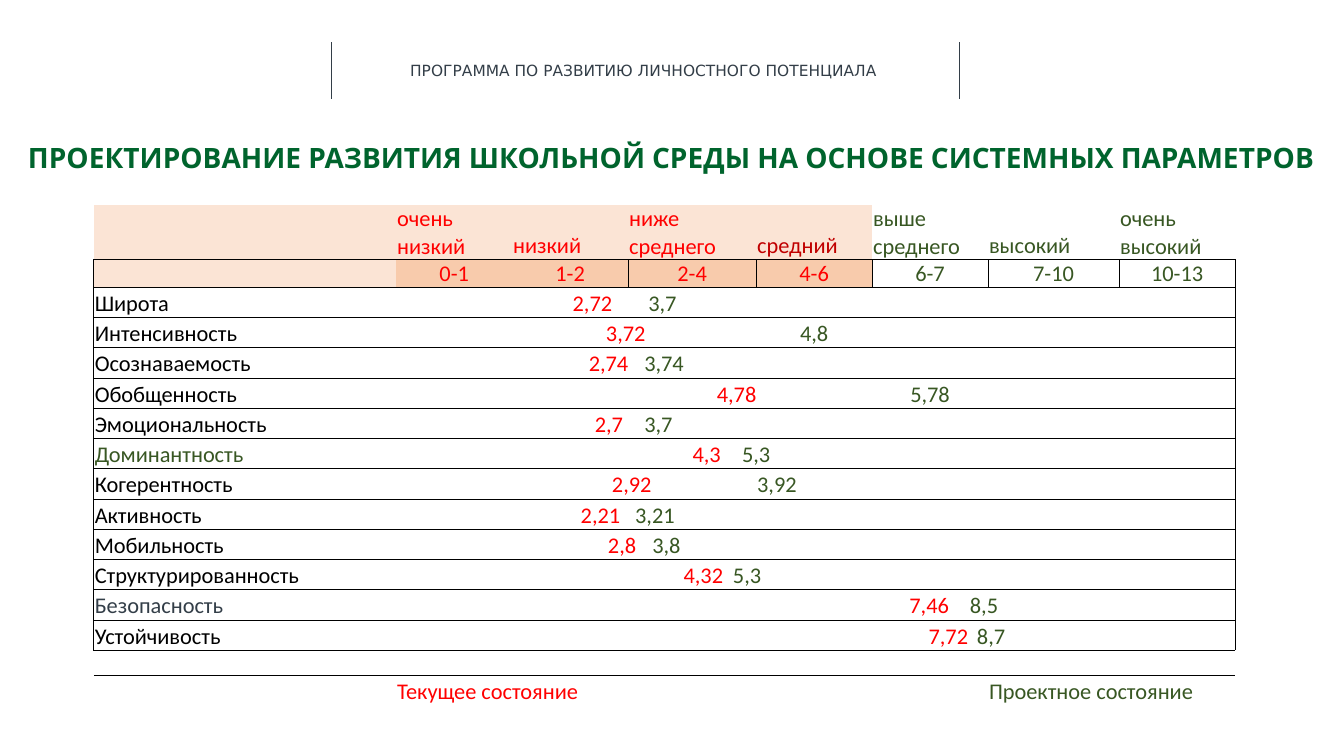
from lxml.etree import SubElement
from pptx import Presentation
from pptx.dml.color import RGBColor
from pptx.enum.shapes import MSO_CONNECTOR
from pptx.enum.text import MSO_ANCHOR as ANCHOR, MSO_AUTO_SIZE as FIT, PP_ALIGN as ALIGN
from pptx.oxml.ns import qn
from pptx.util import Inches, Pt

RED, GREEN, SLATE, BLACK, WHITE = "FF0000", "385723", "333E48", "000000", "FFFFFF"
PEACH, ORANGE = "FBE4D5", "F8CBAC"
NO_STYLE = "{2D5ABB26-0587-4C30-8999-92F81FD0307C}"
COL_WIDTHS = [3, 1.15, 1.15, 1.27, 1.15, 1.15, 1.3, 1.15]
ROW_HEIGHTS = [0.45, 0.25] + [0.3] * 12 + [0.25, 0.3]
LAST = len(COL_WIDTHS) - 1
LEVELS = [
    ("очень низкий", "0-1", RED), ("низкий", "1-2", RED),
    ("ниже среднего", "2-4", RED), ("средний", "4-6", "C00000"),
    ("выше среднего", "6-7", GREEN), ("высокий", "7-10", GREEN),
    ("очень высокий", "10-13", GREEN),
]
# name, colour, columns merged, (current, tab), (planned, tab or alignment in the next cell)
PARAMETERS = [
    ("Широта", BLACK, 4, ("2,72", 4.74), ("3,7", 5.49)),
    ("Интенсивность", BLACK, 4, ("3,72", 5.07), ("4,8", ALIGN.CENTER)),
    ("Осознаваемость", BLACK, 4, ("2,74", 4.9), ("3,74", 5.45)),
    ("Обобщенность", BLACK, 5, ("4,78", 6.17), ("5,78", ALIGN.CENTER)),
    ("Эмоциональность", BLACK, 4, ("2,7", 4.96), ("3,7", 5.45)),
    ("Доминантность", GREEN, 5, ("4,3", 5.93), ("5,3", 6.42)),
    ("Когерентность", BLACK, 4, ("2,92", 5.13), ("3,92", ALIGN.LEFT)),
    ("Активность", BLACK, 4, ("2,21", 4.82), ("3,21", 5.36)),
    ("Мобильность", BLACK, 4, ("2,8", 5.09), ("3,8", 5.53)),
    ("Структурированность", BLACK, 5, ("4,32", 5.84), ("5,3", 6.33)),
    ("Безопасность", SLATE, 7, ("7,46", 8.08), ("8,5", 8.68)),
    ("Устойчивость", BLACK, 7, ("7,72", 8.27), ("8,7", 8.75)),
]


def rgb(value):
    return RGBColor.from_string(value)


def write(p, text, size=16, font="Calibri", color=BLACK, bold=False, align=None):
    if align is not None:
        p.alignment = align
    r = p.add_run()
    r.text = text
    r.font.size, r.font.name, r.font.bold = Pt(size), font, bold
    r.font.color.rgb = rgb(color)


def add_rule(slide, x):
    line = slide.shapes.add_connector(
        MSO_CONNECTOR.STRAIGHT, Inches(x), Inches(0.42), Inches(x), Inches(0.98))
    line.line.color.rgb, line.line.width = rgb(SLATE), Pt(0.5)
    SubElement(line._element.spPr, qn("a:effectLst"))


def set_tabs(p, stops):
    tabs = SubElement(p._p.get_or_add_pPr(), qn("a:tabLst"))
    for stop in stops:
        SubElement(tabs, qn("a:tab"), pos=str(Inches(stop)), algn="l")


def format_cell(cell, fill, sides):
    cell.margin_left = cell.margin_right = cell.margin_top = Inches(0.01)
    cell.margin_bottom = 0
    cell.vertical_anchor = ANCHOR.BOTTOM
    tcPr = cell._tc.get_or_add_tcPr()
    for side in "LRTB":
        if side in sides:
            ln = SubElement(tcPr, qn("a:ln" + side), w=str(Pt(0.5)))
            SubElement(SubElement(ln, qn("a:solidFill")), qn("a:srgbClr"), val=BLACK)
    cell.fill.solid()
    cell.fill.fore_color.rgb = rgb(fill)
    p = cell.text_frame.paragraphs[0]
    if not p.runs:
        SubElement(p._p, qn("a:endParaRPr"), sz="1200")
    return cell


def merge(table, row, first, last):
    table.cell(row, first).merge(table.cell(row, last))


def cell_paragraph(table, row, col):
    return table.cell(row, col).text_frame.paragraphs[0]


def fill_parameter(table, row, name, color, merged, current, planned):
    merge(table, row, 0, merged - 1)
    p = cell_paragraph(table, row, 0)
    inline = isinstance(planned[1], float)
    set_tabs(p, [current[1], planned[1]] if inline else [current[1]])
    write(p, name, color=color)
    write(p, "\t" + current[0], color=RED)
    if inline:
        write(p, "\t" + planned[0], color=GREEN)
    else:
        write(cell_paragraph(table, row, merged), planned[0], color=GREEN, align=planned[1])


def cell_look(row, col):
    low = col <= 4
    if row == 0:
        return (PEACH if low else WHITE), "B"
    if row == 1:
        fill = PEACH if col == 0 else ORANGE if low else WHITE
        return fill, "TB" + ("L" if col in (0, *range(3, 8)) else "") + ("R" if col >= 2 else "")
    if row < 14:
        return WHITE, "TB" + ("L" if col == 0 else "") + ("R" if col == LAST else "")
    return WHITE, "T" if row == 14 else ""


def add_parameter_table(slide):
    frame = slide.shapes.add_table(
        len(ROW_HEIGHTS), len(COL_WIDTHS), Inches(0.93), Inches(2.03),
        Inches(sum(COL_WIDTHS)), Inches(sum(ROW_HEIGHTS)))
    table = frame.table
    table.first_row = table.horz_banding = False
    table._tbl.tblPr.find(qn("a:tableStyleId")).text = NO_STYLE
    for column, width in zip(table.columns, COL_WIDTHS):
        column.width = Inches(width)
    for row, height in zip(table.rows, ROW_HEIGHTS):
        row.height = Inches(height)

    for col, (level, score, color) in enumerate(LEVELS, 1):
        write(cell_paragraph(table, 0, col), level, color=color)
        write(cell_paragraph(table, 1, col), score, color=RED if col <= 4 else GREEN,
              align=ALIGN.CENTER)
    for row, parameter in enumerate(PARAMETERS, 2):
        fill_parameter(table, row, *parameter)
    for row, first, last in [(6, 5, 7), (10, 5, 7), (15, 1, 2), (15, 4, 5), (15, 6, 7)]:
        merge(table, row, first, last)
    write(cell_paragraph(table, 15, 1), "Текущее состояние", color=RED)
    write(cell_paragraph(table, 15, 6), "Проектное состояние", color=GREEN)

    for row in range(len(ROW_HEIGHTS)):
        for col in range(len(COL_WIDTHS)):
            fill, sides = cell_look(row, col)
            cell = table.cell(row, col)
            if cell.is_merge_origin and row < 14 and col + cell.span_width > LAST:
                sides += "R"
            format_cell(cell, fill, sides)


def add_header(slide):
    for x in (3.29, 9.52):
        add_rule(slide, x)
    sp = slide.shapes.add_textbox(Inches(3.97), Inches(0.56), Inches(4.87), Inches(0.29))
    sp.text_frame.word_wrap = True
    write(sp.text_frame.paragraphs[0], "ПРОГРАММА ПО РАЗВИТИЮ ЛИЧНОСТНОГО ПОТЕНЦИАЛА",
          size=11, font="DejaVu Sans", color=SLATE)


def format_title(sp):
    sp.left, sp.top, sp.width, sp.height = 0, Inches(1.43), Inches(13.31), Inches(0.3)
    tf = sp.text_frame
    tf.margin_left = tf.margin_right = tf.margin_top = tf.margin_bottom = 0
    tf.auto_size, tf.word_wrap, tf.vertical_anchor = FIT.NONE, True, ANCHOR.MIDDLE
    p = tf.paragraphs[0]
    p.line_spacing = 0.9
    write(p, "ПРОЕКТИРОВАНИЕ РАЗВИТИЯ ШКОЛЬНОЙ СРЕДЫ НА ОСНОВЕ СИСТЕМНЫХ ПАРАМЕТРОВ",
          size=20, font="Karla", color="00642D", bold=True, align=ALIGN.CENTER)


def main():
    prs = Presentation()
    prs.slide_width, prs.slide_height = Inches(13.33), Inches(7.5)
    slide = prs.slides.add_slide(prs.slide_layouts[5])
    add_header(slide)
    format_title(slide.shapes.title)
    add_parameter_table(slide)
    prs.save("out.pptx")


if __name__ == "__main__":
    main()
